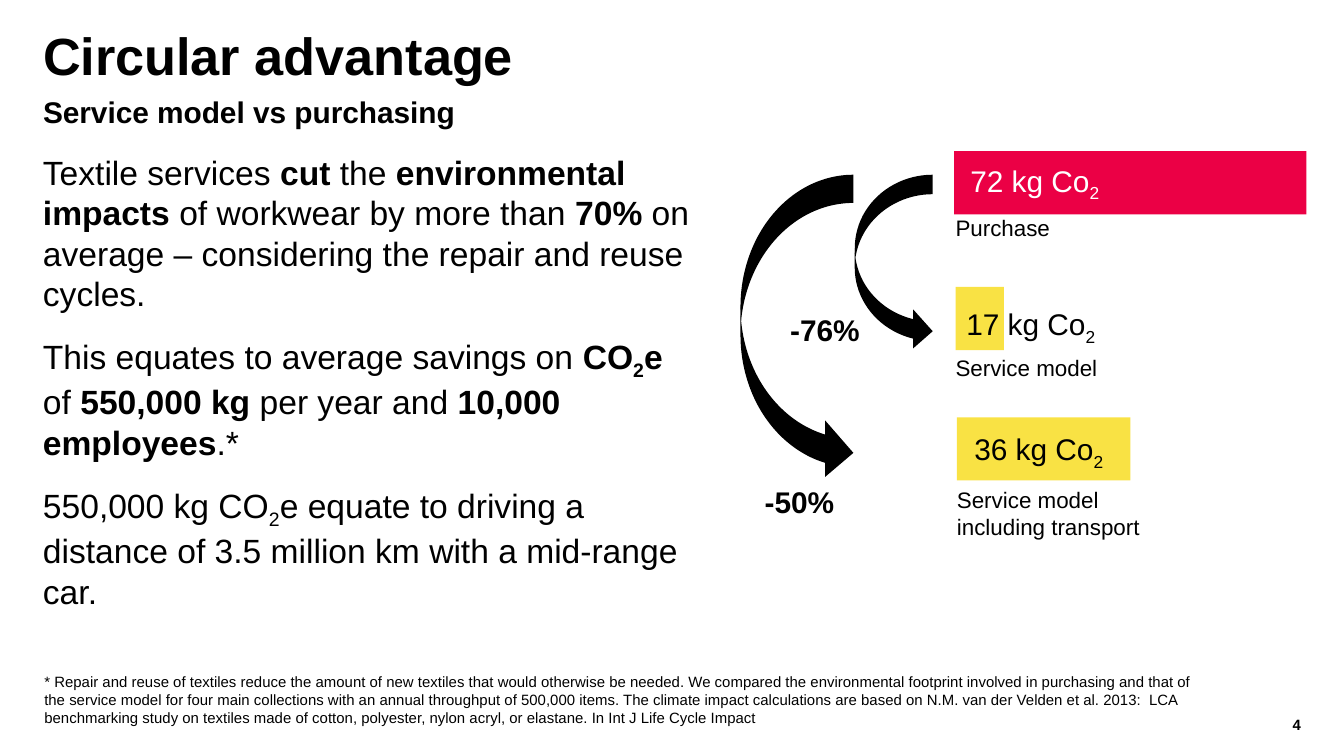
from collections import namedtuple

from pptx import Presentation
from pptx import util as u
from pptx.dml.color import RGBColor
from pptx.enum import shapes, text

BLACK = RGBColor(0x00, 0x00, 0x00)
WHITE = RGBColor(0xFF, 0xFF, 0xFF)
RED = RGBColor(0xEB, 0x00, 0x45)
YELLOW = RGBColor(0xF9, 0xE2, 0x44)

FONT = "Arial"
COLUMNS, ROWS = 100, 56.25
CELL = u.Inches(0.1)
BOLD_MARK, SUB_MARK = "~", "^"

CLAIMS = [
    "Textile services ~cut~ the ~environmental impacts~ of workwear by more than "
    "~70%~ on average – considering the repair and reuse cycles.",
    "This equates to average savings on ~CO^2^e~ of ~550,000 kg~ per year and "
    "~10,000 employees~.*",
    "550,000 kg CO^2^e equate to driving a distance of 3.5 million km with a "
    "mid-range car.",
]
FOOTNOTE = (
    "* Repair and reuse of textiles reduce the amount of new textiles that would "
    "otherwise be needed. We compared the environmental footprint involved in "
    "purchasing and that of the service model for four main collections with an "
    "annual throughput of 500,000 items. The climate impact calculations are based "
    "on N.M. van der Velden et al. 2013:  LCA benchmarking study on textiles made of "
    "cotton, polyester, nylon acryl, or elastane. In Int J Life Cycle Impact"
)


class Box(namedtuple("Box", "left top width height")):
    def inner(self, left, top, width, height):
        return Box(self.left + left, self.top + top, width, height)

    def emu(self):
        return [round(length * CELL) for length in self]


def write_marked(paragraph, marked, size, color, bold):
    subscript = False
    pending = ""
    for mark in marked + BOLD_MARK:
        if mark not in (BOLD_MARK, SUB_MARK):
            pending += mark
            continue
        if pending:
            run = paragraph.add_run()
            run.text = pending
            run.font.name = FONT
            run.font.size = u.Pt(size)
            run.font.bold = bold
            run.font.color.rgb = color
            if subscript:
                run.font._element.set("baseline", "-25000")
        pending = ""
        if mark == BOLD_MARK:
            bold = not bold
        else:
            subscript = not subscript


def fill_frame(frame, paragraphs, size, color=BLACK, bold=False, gap=0,
               align=text.PP_ALIGN.LEFT, anchor=text.MSO_ANCHOR.TOP,
               margins=(0, 0), wrap=True):
    frame.word_wrap = wrap
    frame.vertical_anchor = anchor
    frame.margin_left = frame.margin_right = u.Inches(margins[0])
    frame.margin_top = frame.margin_bottom = u.Inches(margins[1])
    for index, marked in enumerate(paragraphs):
        paragraph = frame.add_paragraph() if index else frame.paragraphs[0]
        paragraph.alignment = align
        paragraph.space_before = u.Pt(gap if index else 0)
        paragraph.space_after = u.Pt(gap)
        write_marked(paragraph, marked, size, color, bold)


def add_label(slide, box, paragraphs, size, **style):
    label = slide.shapes.add_textbox(*box.emu())
    fill_frame(label.text_frame, paragraphs, size, **style)


def add_solid(slide, preset, box, color):
    solid = slide.shapes.add_shape(preset, *box.emu())
    solid.shadow.inherit = False
    solid.fill.solid()
    solid.fill.fore_color.rgb = color
    solid.line.fill.background()
    return solid


def add_heading(slide, box):
    title = slide.shapes.title
    title.left, title.top, title.width, title.height = box.inner(0, 0, 45.6, 3.9).emu()
    fill_frame(title.text_frame, ["Circular advantage"], 28, bold=True)
    title.text_frame.paragraphs[0].line_spacing = 0.8
    add_label(slide, box.inner(0, 4.4, box.width, 2.7),
              ["Service model vs purchasing"], 16, bold=True)


def add_emissions(slide, box):
    bar_height = 4.7
    rectangle = shapes.MSO_SHAPE.RECTANGLE
    purchase = add_solid(slide, rectangle, box.inner(0, 0, box.width, bar_height), RED)
    fill_frame(purchase.text_frame, ["72 kg Co^2^"], 16, color=WHITE,
               anchor=text.MSO_ANCHOR.MIDDLE, margins=(0.12, 0.08))

    service_bars = [
        (0.1, 10.1, 3.6, "17 kg Co^2^", 0.8, 1.4),
        (0.2, 19.8, 12.9, "36 kg Co^2^", 1.3, 1.0),
    ]
    for left, top, width, amount, indent, drop in service_bars:
        add_solid(slide, rectangle, box.inner(left, top, width, bar_height), YELLOW)
        add_label(slide, box.inner(left + indent, top + drop, 15.3, 2.7), [amount], 16)

    captions = [
        (0.1, 4.7, 2, "Purchase"),
        (0.1, 15.1, 2, "Service model"),
        (0.2, 24.9, 4, "Service model including transport"),
    ]
    for left, top, height, caption in captions:
        add_label(slide, box.inner(left, top, 16, height), [caption], 12)


def add_savings(slide, box):
    savings = [
        ((8.5, 0, 5.8, 13.1), "-76%", (3.7, 10.2)),
        ((0, 0, 8.4, 22.8), "-50%", (1.8, 23)),
    ]
    for sweep, saving, corner in savings:
        add_solid(slide, shapes.MSO_SHAPE.CURVED_RIGHT_ARROW, box.inner(*sweep), BLACK)
        add_label(slide, box.inner(*corner, 6.6, 2.7), [saving], 16, bold=True)


def add_footer(slide, box):
    add_label(slide, box.inner(0, 0, 86.7, 4), [FOOTNOTE], 8,
              anchor=text.MSO_ANCHOR.BOTTOM)
    add_label(slide, box.inner(box.width - 3, 3.2, 3, 1.3), ["4"], 8, bold=True,
              align=text.PP_ALIGN.RIGHT, wrap=False)


def main():
    deck = Presentation()
    deck.slide_width = round(COLUMNS * CELL)
    deck.slide_height = round(ROWS * CELL)
    slide = deck.slides.add_slide(deck.slide_layouts[5])
    add_heading(slide, Box(3.2, 2.6, 73.5, 7.1))
    add_label(slide, Box(3.2, 11.3, 48.3, 33.7), CLAIMS, 18, gap=6)
    add_emissions(slide, Box(71, 11.25, 26.2, 28.9))
    add_savings(slide, Box(55.1, 13, 14.3, 25.7))
    add_footer(slide, Box(3.3, 50.05, 93.5, 4.5))
    deck.save("out.pptx")


if __name__ == "__main__":
    main()
